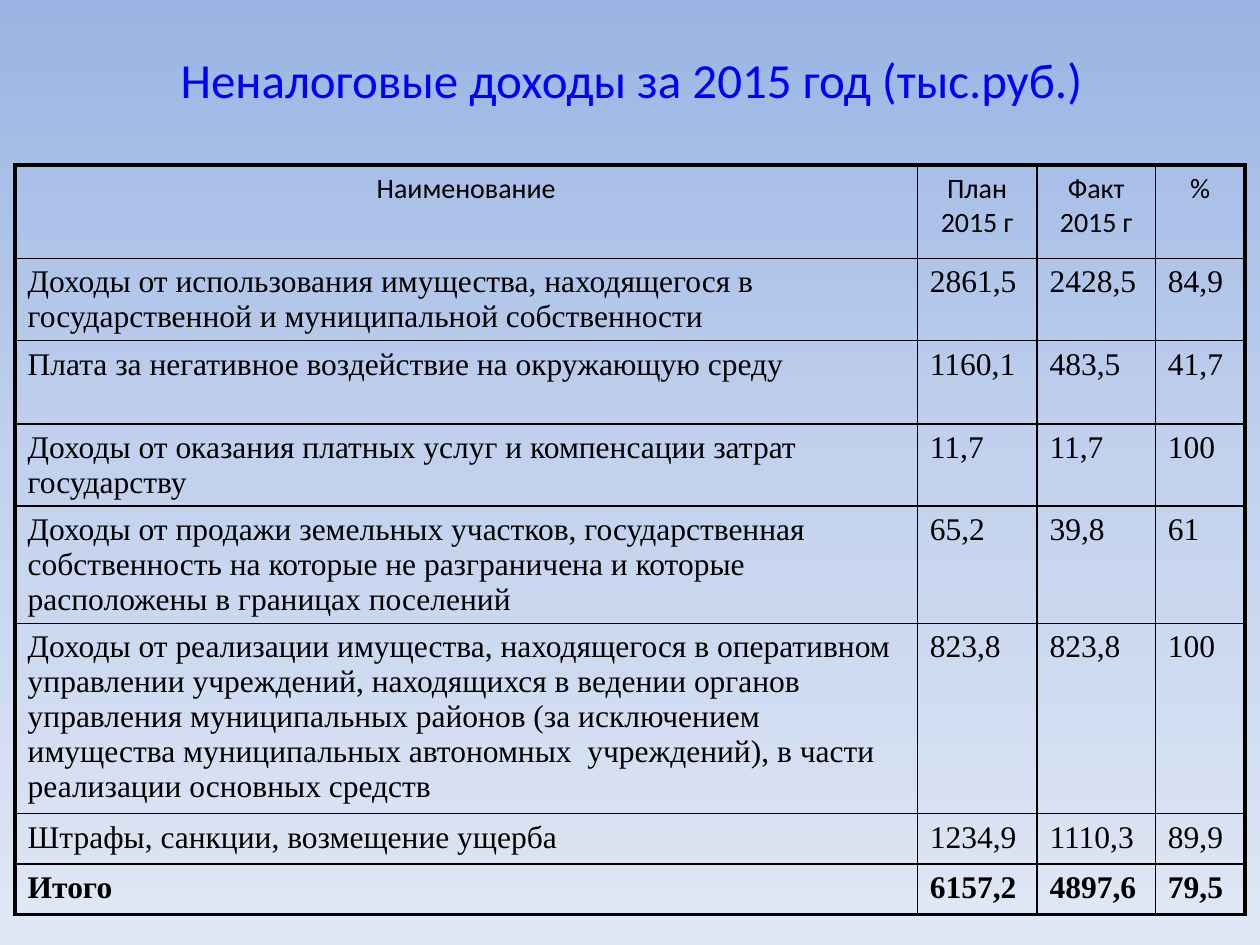
"""Build a slide with a table of non-tax revenue for 2015."""
from copy import deepcopy

from lxml import etree
from pptx import Presentation
from pptx.dml.color import RGBColor
from pptx.enum.text import MSO_ANCHOR, PP_ALIGN
from pptx.oxml.ns import qn
from pptx.util import Inches, Pt

CENTER, LEFT = PP_ALIGN.CENTER, PP_ALIGN.LEFT
MIDDLE = MSO_ANCHOR.MIDDLE
BLACK = RGBColor(0x00, 0x00, 0x00)
BLUE = RGBColor(0x00, 0x00, 0xFF)
SKY = [RGBColor(0x9A, 0xB5, 0xE4), RGBColor(0xC2, 0xD1, 0xED), RGBColor(0xE1, 0xE8, 0xF5)]
THIN, THICK = Pt(1), Pt(2.25)

COL_WIDTHS = [7.16, 0.95, 0.94, 0.71]
ROW_HEIGHTS = [0.74, 0.65, 0.66, 0.65, 0.93, 1.51, 0.4, 0.4]
ROWS = [
    ("Наименование", "План 2015 г", "Факт 2015 г", "%"),
    ("Доходы от использования имущества, находящегося в государственной и "
     "муниципальной собственности", "2861,5", "2428,5", "84,9"),
    ("Плата за негативное воздействие на окружающую среду", "1160,1", "483,5", "41,7"),
    ("Доходы от оказания платных услуг и компенсации затрат государству",
     "11,7", "11,7", "100"),
    ("Доходы от продажи земельных участков, государственная собственность на которые "
     "не разграничена и которые расположены в границах поселений", "65,2", "39,8", "61"),
    ("Доходы от реализации имущества, находящегося в оперативном управлении учреждений, "
     "находящихся в ведении органов управления муниципальных районов (за исключением "
     "имущества муниципальных автономных  учреждений), в части реализации основных средств",
     "823,8", "823,8", "100"),
    ("Штрафы, санкции, возмещение ущерба", "1234,9", "1110,3", "89,9"),
    ("Итого", "6157,2", "4897,6", "79,5"),
]
LAST_ROW, LAST_COL = len(ROWS) - 1, len(COL_WIDTHS) - 1


def set_border(cell, side, width):
    ln = etree.SubElement(cell._tc.get_or_add_tcPr(), qn(f"a:ln{side}"), w=str(int(width)))
    fill = etree.SubElement(ln, qn("a:solidFill"))
    etree.SubElement(fill, qn("a:srgbClr"), val=str(BLACK))


def set_space_before(p, percent):
    p.space_before = Pt(0)
    spacing = p._p.pPr.find(qn("a:spcBef"))
    spacing.remove(spacing[0])
    etree.SubElement(spacing, qn("a:spcPct"), val=str(percent * 1000))


prs = Presentation()
prs.slide_width, prs.slide_height = Inches(10), Inches(7.5)
s = prs.slides.add_slide(prs.slide_layouts[5])

fill = s.background.fill
fill.gradient()
fill.gradient_angle = 270
first_stop = s._element.xpath(".//a:gsLst/a:gs")[0]
first_stop.addnext(deepcopy(first_stop))
for i, (stop, color) in enumerate(zip(fill.gradient_stops, SKY)):
    stop.position = i / 2
    stop.color.rgb = color

title = s.shapes.title
title.left, title.top = Inches(0.51), Inches(0)
title.width, title.height = Inches(9), Inches(1.25)
tf = title.text_frame
tf.text = "Неналоговые доходы за 2015 год (тыс.руб.)"
tf.vertical_anchor = MIDDLE
p = tf.paragraphs[0]
p.alignment = CENTER
p.font.size, p.font.name = Pt(28), "Calibri"
p.font.color.rgb = BLUE

table = s.shapes.add_table(len(ROWS), len(COL_WIDTHS), Inches(0.12), Inches(1.31),
                           Inches(9.76), Inches(5.94)).table
table.first_row = table.horz_banding = False
for column, width in zip(table.columns, COL_WIDTHS):
    column.width = Inches(width)
for row, height in zip(table.rows, ROW_HEIGHTS):
    row.height = Inches(height)

for i, values in enumerate(ROWS):
    header = i == 0
    for j, value in enumerate(values):
        cell = table.cell(i, j)
        cell.text = value
        p = cell.text_frame.paragraphs[0]
        p.alignment = CENTER if header else LEFT
        set_space_before(p, 20)
        p.font.size = Pt(16 if header else 18)
        p.font.name = "Calibri" if header else "Times New Roman"
        p.font.bold = i == LAST_ROW
        p.font.color.rgb = BLACK
        edges = {"L": j == 0, "R": j == LAST_COL, "T": header, "B": i == LAST_ROW}
        for side, outer in edges.items():
            set_border(cell, side, THICK if outer else THIN)
        cell.fill.background()

prs.save("out.pptx")
